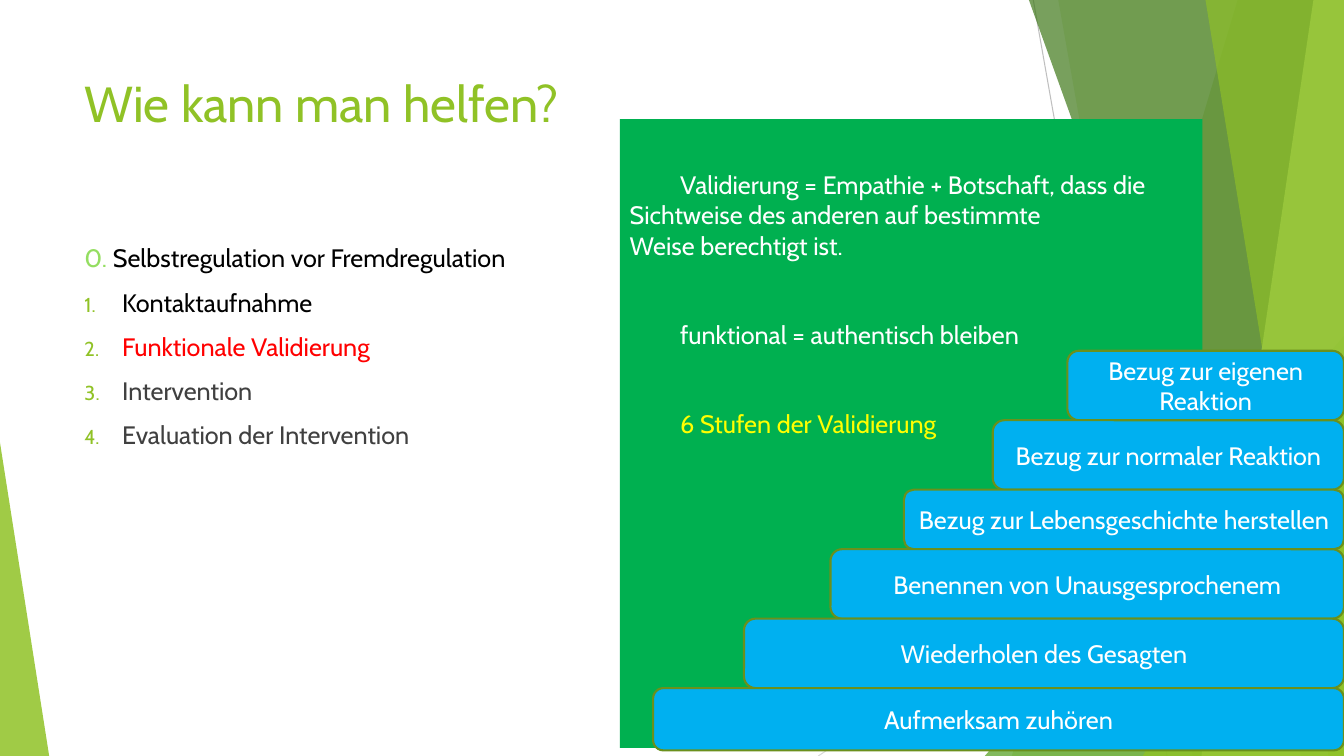
from lxml.etree import SubElement
from pptx import Presentation
from pptx.dml.color import RGBColor
from pptx.enum.shapes import MSO_CONNECTOR, MSO_SHAPE
from pptx.enum.text import MSO_ANCHOR, MSO_AUTO_SIZE, PP_ALIGN
from pptx.oxml.ns import qn
from pptx.util import Cm, Pt

WIDTH, HEIGHT = 33.87, 19.05
FONT = "Cabin"
COLORS = {
    "lime": "90C226", "leaf": "54A021", "forest": "3F7819", "pale": "C0E474",
    "mint": "94DE61", "panel": "00B050", "step": "00B0F0", "edge": "6B901C",
    "silver": "BFBFBF", "mist": "D9D9D9", "text": "404040", "black": "000000",
    "white": "FFFFFF", "red": "FF0000", "yellow": "FFFF00",
}

TITLE = "Wie kann man helfen?"
# Each paragraph is a list of (text, color) runs
PREFACE = [("0. ", "mint"), ("Selbstregulation vor Fremdregulation", "black")]
NUMBERED = [
    [("Kontaktaufnahme", "black")],
    [("Funktionale Validierung", "red")],
    [("Intervention", "text")],
    [("Evaluation der Intervention", "text")],
]
DEFINITIONS = [
    [("Validierung = Empathie + Botschaft, dass die Sichtweise des anderen "
      "auf bestimmte\vWeise berechtigt ist.", "white")],
    [("funktional = authentisch bleiben", "white")],
    [("6 Stufen der Validierung", "yellow")],
]
# From the top step down: text, left edge, height
STEPS = [
    ("Bezug zur eigenen Reaktion", 26.9, 1.75),
    ("Bezug zur normaler Reaktion", 25.02, 1.75),
    ("Bezug zur Lebensgeschichte herstellen", 22.78, 1.5),
    ("Benennen von Unausgesprochenem", 20.93, 1.75),
    ("Wiederholen des Gesagten", 18.75, 1.75),
    ("Aufmerksam zuhören", 16.46, 1.57),
]
STEPS_TOP = 8.84

RAYS = [((26.04, 0), (29.41, HEIGHT), "silver"),
        ((WIDTH, 10.24), (20.62, HEIGHT), "mist")]
# Bands reach the right edge: x at the top, x at the bottom, color, opacity
BACK_BANDS = [(31.19, 25.5, "lime", 30), (26.67, 30.05, "lime", 20)]
FRONT_BANDS = [(25.93, 32.79, "forest", 70), (33.1, 30.28, "pale", 70),
               (30.38, 33.48, "lime", 65)]
# Triangles stand on the bottom edge: left, width, height, apex, color, opacity
BACK_TRIANGLE = (24.82, 9.05, 10.59, 1, "leaf", 72)
FRONT_TRIANGLES = [(28.8, 5.07, 9.07, 1, "lime", 80),
                   (0, 1.24, 7.9, 0, "lime", 85)]


def rgb(color):
    return RGBColor.from_string(COLORS[color])


def paint(shape, color, opacity=100, edge=None):
    shape.shadow.inherit = False
    shape.fill.solid()
    shape.fill.fore_color.rgb = rgb(color)
    if opacity < 100:
        fill = shape.fill._xPr.find(qn("a:solidFill"))
        SubElement(fill[0], qn("a:alpha"), val=str(opacity * 1000))
    if edge:
        shape.line.color.rgb = rgb(edge)
        shape.line.width = Pt(1.5)
    else:
        shape.line.fill.background()


def add_ray(start, end, color):
    ray = slide.shapes.add_connector(
        MSO_CONNECTOR.STRAIGHT, *map(Cm, start + end))
    ray.line.color.rgb = rgb(color)
    ray.line.width = Pt(0.75)
    SubElement(ray._element.spPr, qn("a:effectLst"))


def add_band(top_x, bottom_x, color, opacity):
    outline = slide.shapes.build_freeform(Cm(top_x), 0)
    corners = [(WIDTH, 0), (WIDTH, HEIGHT), (bottom_x, HEIGHT)]
    outline.add_line_segments([(Cm(x), Cm(y)) for x, y in corners], close=True)
    paint(outline.convert_to_shape(), color, opacity)


def add_triangle(left, width, height, apex, color, opacity):
    triangle = slide.shapes.add_shape(
        MSO_SHAPE.ISOSCELES_TRIANGLE, Cm(left), Cm(HEIGHT - height),
        Cm(width), Cm(height))
    triangle.adjustments[0] = apex
    paint(triangle, color, opacity)


def write(frame, paragraphs, size=18, align=PP_ALIGN.LEFT,
          anchor=MSO_ANCHOR.TOP, gap=0):
    """Fill a text frame; a vertical tab in a run breaks the line."""
    frame.word_wrap = True
    frame.auto_size = MSO_AUTO_SIZE.NONE
    frame.vertical_anchor = anchor
    for index, runs in enumerate(paragraphs):
        paragraph = frame.add_paragraph() if index else frame.paragraphs[0]
        paragraph.alignment = align
        paragraph.space_before = Pt(gap if index else 0)
        for text, color in runs:
            for number, line in enumerate(text.split("\v")):
                if number:
                    paragraph.add_line_break()
                run = paragraph.add_run()
                run.text = line
                run.font.name = FONT
                run.font.size = Pt(size)
                run.font.color.rgb = rgb(color)


def indent(paragraph, first, left=0):
    properties = paragraph._p.get_or_add_pPr()
    properties.set("marL", str(Cm(left)))
    properties.set("indent", str(Cm(first)))
    return properties


def number(paragraph):
    properties = indent(paragraph, -0.95, left=0.95)
    bullet_color = SubElement(properties, qn("a:buClr"))
    SubElement(bullet_color, qn("a:srgbClr"), val=COLORS["lime"])
    SubElement(properties, qn("a:buSzPct"), val="80000")
    SubElement(properties, qn("a:buFont"), typeface=FONT)
    SubElement(properties, qn("a:buAutoNum"), type="arabicPeriod")


deck = Presentation()
deck.slide_width, deck.slide_height = Cm(WIDTH), Cm(HEIGHT)
slide = deck.slides.add_slide(deck.slide_layouts[5])

for ray_parts in RAYS:
    add_ray(*ray_parts)
for band_parts in BACK_BANDS:
    add_band(*band_parts)
add_triangle(*BACK_TRIANGLE)
for band_parts in FRONT_BANDS:
    add_band(*band_parts)
for triangle_parts in FRONT_TRIANGLES:
    add_triangle(*triangle_parts)

title = slide.shapes.title
title.left, title.top, title.width, title.height = map(
    Cm, (1.88, 1.7, 23.88, 3.66))
write(title.text_frame, [[(TITLE, "lime")]], size=36)

agenda = slide.shapes.add_textbox(*map(Cm, (1.88, 5.99, 23.88, 10.77)))
write(agenda.text_frame, [PREFACE] + NUMBERED, gap=10)
for item in agenda.text_frame.paragraphs[1:]:
    number(item)

panel = slide.shapes.add_shape(
    MSO_SHAPE.RECTANGLE, *map(Cm, (15.62, 3, 14.68, 15.85)))
paint(panel, "panel")
panel.text_frame.margin_top = Cm(1.27)
write(panel.text_frame, DEFINITIONS, gap=42)
for definition in panel.text_frame.paragraphs:
    indent(definition, 1.27)

step_top = STEPS_TOP
for label, step_left, step_height in STEPS:
    step = slide.shapes.add_shape(
        MSO_SHAPE.ROUNDED_RECTANGLE, Cm(step_left), Cm(step_top),
        Cm(WIDTH - step_left), Cm(step_height))
    paint(step, "step", edge="edge")
    step.text_frame.margin_left = step.text_frame.margin_right = Cm(0.2)
    write(step.text_frame, [[(label, "white")]],
          align=PP_ALIGN.CENTER, anchor=MSO_ANCHOR.MIDDLE)
    step_top += step_height

deck.save("out.pptx")
